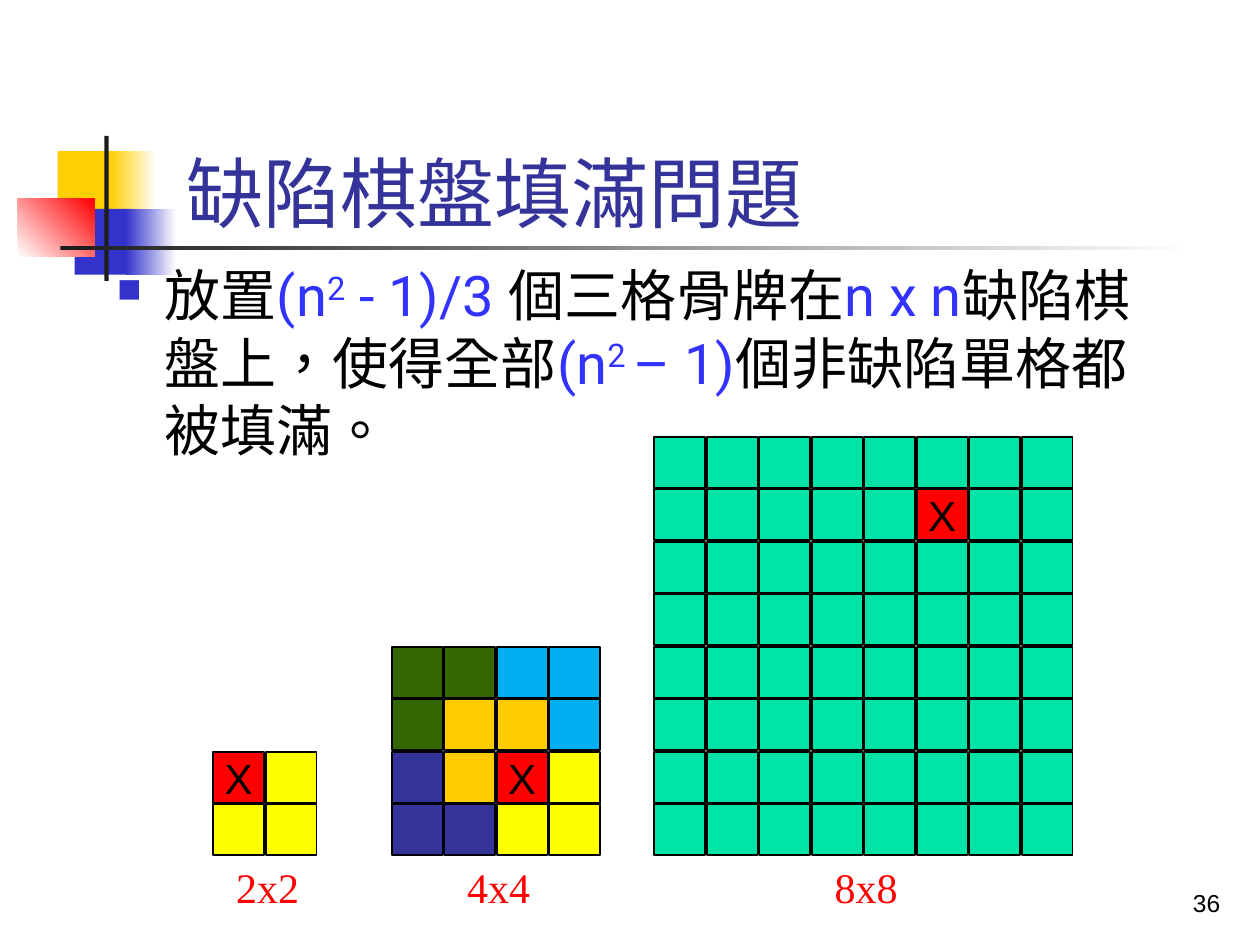
from lxml import etree
from pptx import Presentation
from pptx.dml.color import RGBColor
from pptx.enum.shapes import MSO_SHAPE
from pptx.enum.text import MSO_ANCHOR, PP_ALIGN
from pptx.oxml.ns import qn
from pptx.util import Inches, Pt

RECT = MSO_SHAPE.RECTANGLE
LOW, MID = MSO_ANCHOR.BOTTOM, MSO_ANCHOR.MIDDLE
LEFT, MIDST, RIGHT = PP_ALIGN.LEFT, PP_ALIGN.CENTER, PP_ALIGN.RIGHT

HUES = {
    "gold": "FFCF01", "blue": "3333CC", "red": "FF0000", "white": "FFFFFF",
    "dark": "1C1C1C", "black": "000000", "navy": "333399", "math": "3333FF",
    "yellow": "FFFF00", "green": "336600", "amber": "FFCC00", "sky": "00B0F0",
    "mint": "00E4A8",
}
RGB = {name: RGBColor.from_string(code) for name, code in HUES.items()}

deck = Presentation()
deck.slide_width, deck.slide_height = Inches(10), Inches(7.5)
UNIT = deck.slide_width / 24  # 24 columns by 18 rows of square cells
slide = deck.slides.add_slide(deck.slide_layouts[5])
shapes = slide.shapes


def grid(*cells):
    """Turn columns and rows into slide lengths."""
    return [round(cell * UNIT) for cell in cells]


def style(para, size, face, hue, align=LEFT):
    para.alignment = align
    for run in para.runs:
        run.font.size, run.font.name = Pt(size), face
        run.font.color.rgb = RGB[hue]
        run._r.get_or_add_rPr().set("lang", "zh-TW")


# Corner ornament: box, first colour, last colour, angle
ORNAMENT = [
    ((1.1, 2.88, 1.15, 1.25), "gold", None, 0),
    ((2.11, 2.88, 0.86, 1.25), "gold", "white", 0),
    ((1.42, 3.98, 1.1, 1.25), "blue", None, 0),
    ((2.4, 3.98, 0.96, 1.25), "blue", "white", 0),
    ((0.34, 3.79, 1.46, 1.1), "white", "red", 45),
    ((1.99, 2.59, 0.08, 2.76), "dark", None, 0),
    ((1.15, 4.68, 21.6, 0.08), "dark", "white", 0),
]
for box, first, last, angle in ORNAMENT:
    part = shapes.add_shape(RECT, *grid(*box))
    part.shadow.inherit = False
    part.line.fill.background()
    if last:
        part.fill.gradient()
        part.fill.gradient_angle = angle
        for stop, hue in zip(part.fill.gradient_stops, (first, last)):
            stop.color.rgb = RGB[hue]
    else:
        part.fill.solid()
        part.fill.fore_color.rgb = RGB[first]

# Title
title = shapes.title
title.left, title.top, title.width, title.height = grid(3.31, 0.41, 19.1, 4.25)
title.text_frame.text = "缺陷棋盤填滿問題"
title.text_frame.vertical_anchor = LOW
style(title.text_frame.paragraphs[0], 44, "Roboto", "navy")

# Problem statement: text, colour, raised or not
PARTS = [
    ("放置", "black", False), ("(n", "math", False), ("2", "math", True),
    (" - 1)/3 ", "math", False), ("個三格骨牌在", "black", False),
    ("n x n", "math", False), ("缺陷棋盤上，使得全部", "black", False),
    ("(n", "math", False), ("2 ", "math", True), ("– 1)", "math", False),
    ("個非缺陷單格都被填滿。", "black", False),
]
body = shapes.add_textbox(*grid(1.99, 4.85, 20.4, 4.37)).text_frame
body.word_wrap = True
para = body.paragraphs[0]
for text, hue, high in PARTS:
    para.add_run().text = text
style(para, 32, "Roboto", "black")
for run, (text, hue, high) in zip(para.runs, PARTS):
    run.font.color.rgb = RGB[hue]
    if high:
        run.font._element.set("baseline", "30000")
props = para._p.get_or_add_pPr()
props.set("marL", str(Inches(0.38)))
props.set("indent", str(-Inches(0.38)))
tint = etree.SubElement(props, qn("a:buClr"))
etree.SubElement(tint, qn("a:srgbClr"), val=HUES["blue"])
etree.SubElement(props, qn("a:buSzPct"), val="60000")
etree.SubElement(props, qn("a:buChar"), char="■")

# Boards: left column and rows of cells; R is the defective cell
KEYS = {"R": "red", "Y": "yellow", "G": "green", "S": "sky",
        "A": "amber", "N": "navy", "M": "mint"}
BOARDS = [
    (4.06, ["RY", "YY"]),
    (7.46, ["GGSS", "GAAS", "NARY", "NNYY"]),
    (12.46, ["M" * 8, "MMMMMRMM"] + ["M" * 8] * 6),
]
FLOOR = 16.32
for left, rows in BOARDS:
    size = len(rows)
    for y, row in enumerate(rows):
        for x, key in enumerate(row):
            cell = shapes.add_shape(
                RECT, *grid(left + x, FLOOR - size + y, 0.97, 0.97))
            cell.shadow.inherit = False
            cell.fill.solid()
            cell.fill.fore_color.rgb = RGB[KEYS[key]]
            cell.line.color.rgb = RGB["black"]
            cell.line.width = Pt(1)
            if key == "R":
                frame = cell.text_frame
                frame.text = "X"
                frame.word_wrap = False
                frame.vertical_anchor = MID
                style(frame.paragraphs[0], 24, "Arial", "black", MIDST)
    label = shapes.add_textbox(*grid(left + size / 2 - 0.8, 16.3, 2, 1.2))
    label.text_frame.word_wrap = True
    label.text_frame.text = f"{size}x{size}"
    style(label.text_frame.paragraphs[0], 24, "Times New Roman", "red")

# Page number
page = shapes.add_textbox(*grid(18.48, 16.39, 5, 1.2)).text_frame
page.word_wrap = True
page.vertical_anchor = LOW
page.text = "36"
style(page.paragraphs[0], 14, "Arial", "black", RIGHT)

deck.save("out.pptx")
